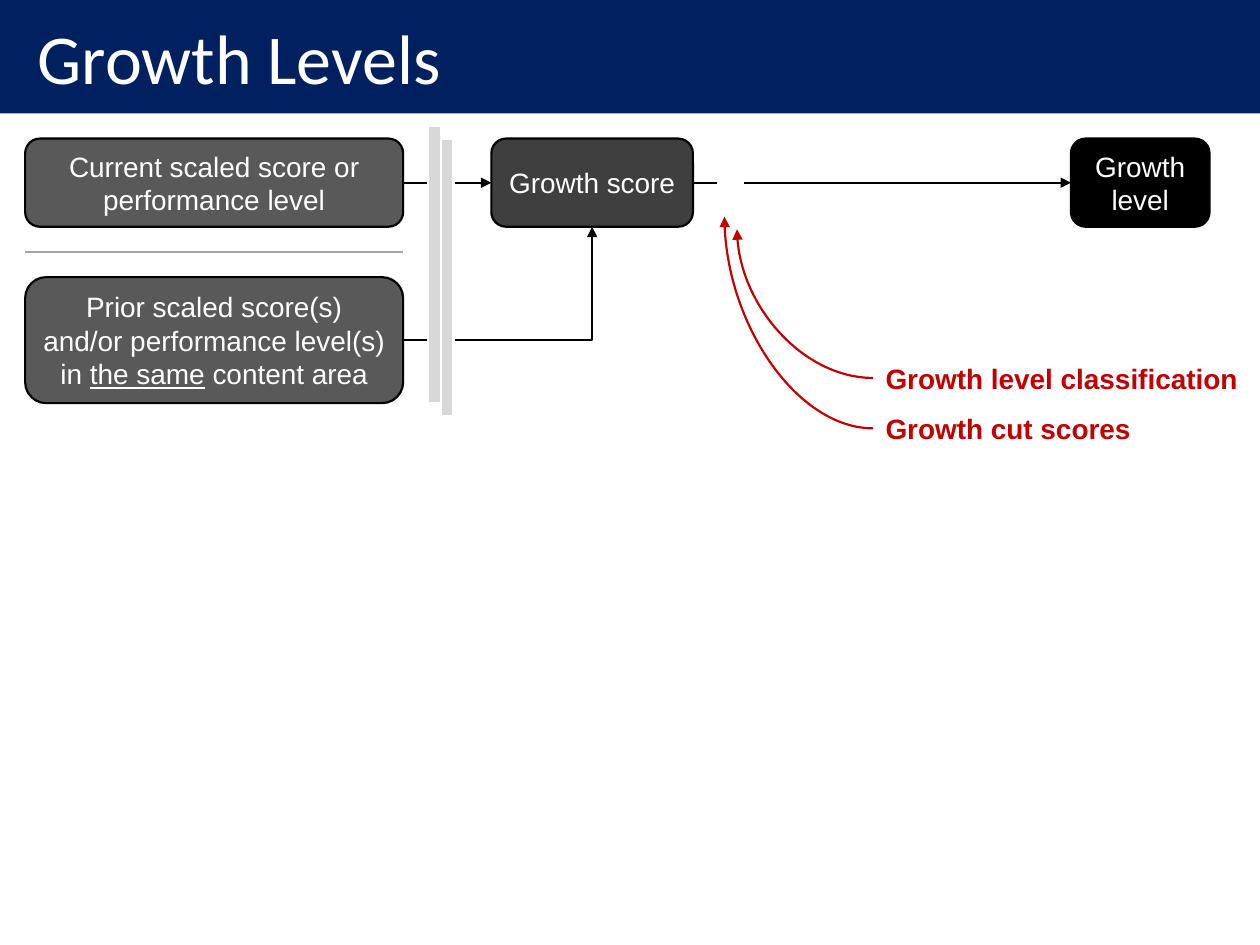
import pptx
import pptx.util
import pptx.dml.color
import pptx.enum.shapes
import pptx.enum.text
import pptx.oxml.ns
import lxml.etree

PX = 9144  # 100 px to the inch
SHAPE = pptx.enum.shapes.MSO_SHAPE
LINK = pptx.enum.shapes.MSO_CONNECTOR
ALIGN = pptx.enum.text.PP_ALIGN
MIDDLE = pptx.enum.text.MSO_ANCHOR.MIDDLE

TITLE = "Growth Levels"
NAVY, RED, BLACK, WHITE = "002060", "C00000", "000000", "FFFFFF"
GREY, RULE, BAR = "595959", "A5A5A5", "D8D8D8"

# text (parts between bars are underlined), place, fill
BOXES = [
    ("Current scaled score or\nperformance level", (20, 110, 300, 70), GREY),
    ("Prior scaled score(s)\nand/or performance level(s)\n"
     "in |the same| content area", (20, 220, 300, 100), GREY),
    ("Growth score", (390, 110, 160, 70), "3F3F3F"),
    ("Growth\nlevel", (850, 110, 110, 70), BLACK),
]
# kind, ends, colour, arrowhead
LINKS = [
    (LINK.ELBOW, (320, 270, 470, 180), BLACK, True),
    (LINK.STRAIGHT, (320, 145, 390, 145), BLACK, True),
    (LINK.STRAIGHT, (20, 200, 320, 200), RULE, False),
    (LINK.STRAIGHT, (550, 145, 850, 145), BLACK, True),
]
# left, top, height, colour of the first bar in each pair
BARS = [(340, 100, 220, BAR), (570, 102, 70, WHITE)]
STEP = 10
# text, middle height, arrow tip
NOTES = [
    ("Growth cut scores", 340, (575, 172)),
    ("Growth level classification", 300, (585, 182)),
]
NOTE_X, NOTE_W, NOTE_H = 693, 307, 40
PRESET = {LINK.ELBOW: "bentConnector2", LINK.CURVE: "curvedConnector2"}


def px(*nums):
    return [pptx.util.Emu(n * PX) for n in nums]


def color(code):
    return pptx.dml.color.RGBColor.from_string(code)


def stroke(line, code):
    line.color.rgb = color(code)
    line.width = pptx.util.Pt(1.25)


def style(frame, size, face, code, align, pads, bold=False):
    frame.word_wrap = True
    frame.vertical_anchor = MIDDLE
    (frame.margin_left, frame.margin_top,
     frame.margin_right, frame.margin_bottom) = px(*pads)
    for para in frame.paragraphs:
        para.alignment = align
        for run in para.runs:
            run.font.size = pptx.util.Pt(size)
            run.font.name = face
            run.font.bold = bold
            run.font.color.rgb = color(code)


def add_shape(slide, kind, place, fill=None, edge=None):
    shape = slide.shapes.add_shape(kind, *px(*place))
    shape.shadow.inherit = False
    if fill:
        shape.fill.solid()
        shape.fill.fore_color.rgb = color(fill)
    else:
        shape.fill.background()
    if edge:
        stroke(shape.line, edge)
    else:
        shape.line.fill.background()
    return shape


def add_link(slide, kind, ends, code, arrow):
    link = slide.shapes.add_connector(kind, *px(*ends))
    stroke(link.line, code)
    props = link._element.spPr
    if kind in PRESET:
        props.prstGeom.set("prst", PRESET[kind])
    qn = pptx.oxml.ns.qn
    if arrow:
        lxml.etree.SubElement(props.find(qn("a:ln")), qn("a:tailEnd"), type="triangle")
    lxml.etree.SubElement(props, qn("a:effectLst"))


def add_box(slide, text, place, fill):
    box = add_shape(slide, SHAPE.ROUNDED_RECTANGLE, place, fill, BLACK)
    frame = box.text_frame
    frame.text = text.replace("|", "")
    for para, row in zip(frame.paragraphs, text.split("\n")):
        parts = row.split("|")
        para.runs[0].text = parts[0]
        for i, part in enumerate(parts[1:], 1):
            run = para.add_run()
            run.text = part
            run.font.underline = i % 2 == 1
    style(frame, 16, "Arial", WHITE, ALIGN.CENTER, (0, 0, 0, 0))


def add_note(slide, text, mid, tip):
    place = (NOTE_X, mid - NOTE_H // 2, NOTE_W, NOTE_H)
    note = add_shape(slide, SHAPE.FLOWCHART_PROCESS, place)
    note.text_frame.text = text
    style(note.text_frame, 16, "Arial", RED, ALIGN.LEFT, (10, 0, 10, 0), True)
    add_link(slide, LINK.CURVE, (NOTE_X, mid, *tip), RED, True)


def add_title(slide):
    title = slide.shapes.title
    title.left, title.top, title.width, title.height = px(0, 0, 1000, 90)
    title.fill.solid()
    title.fill.fore_color.rgb = color(NAVY)
    title.text_frame.text = TITLE
    style(title.text_frame, 40, "Calibri", WHITE, ALIGN.LEFT, (30, 5, 10, 5))


def main():
    deck = pptx.Presentation()
    deck.slide_width, deck.slide_height = px(1000, 750)
    slide = deck.slides.add_slide(deck.slide_layouts[5])
    add_title(slide)
    for link in LINKS:
        add_link(slide, *link)
    for left, top, high, code in BARS:
        for move in (0, STEP):
            place = (left + move, top + move, STEP, high)
            add_shape(slide, SHAPE.FLOWCHART_PROCESS, place, code, WHITE)
    for box in BOXES:
        add_box(slide, *box)
    for note in NOTES:
        add_note(slide, *note)
    deck.save("out.pptx")


if __name__ == "__main__":
    main()
